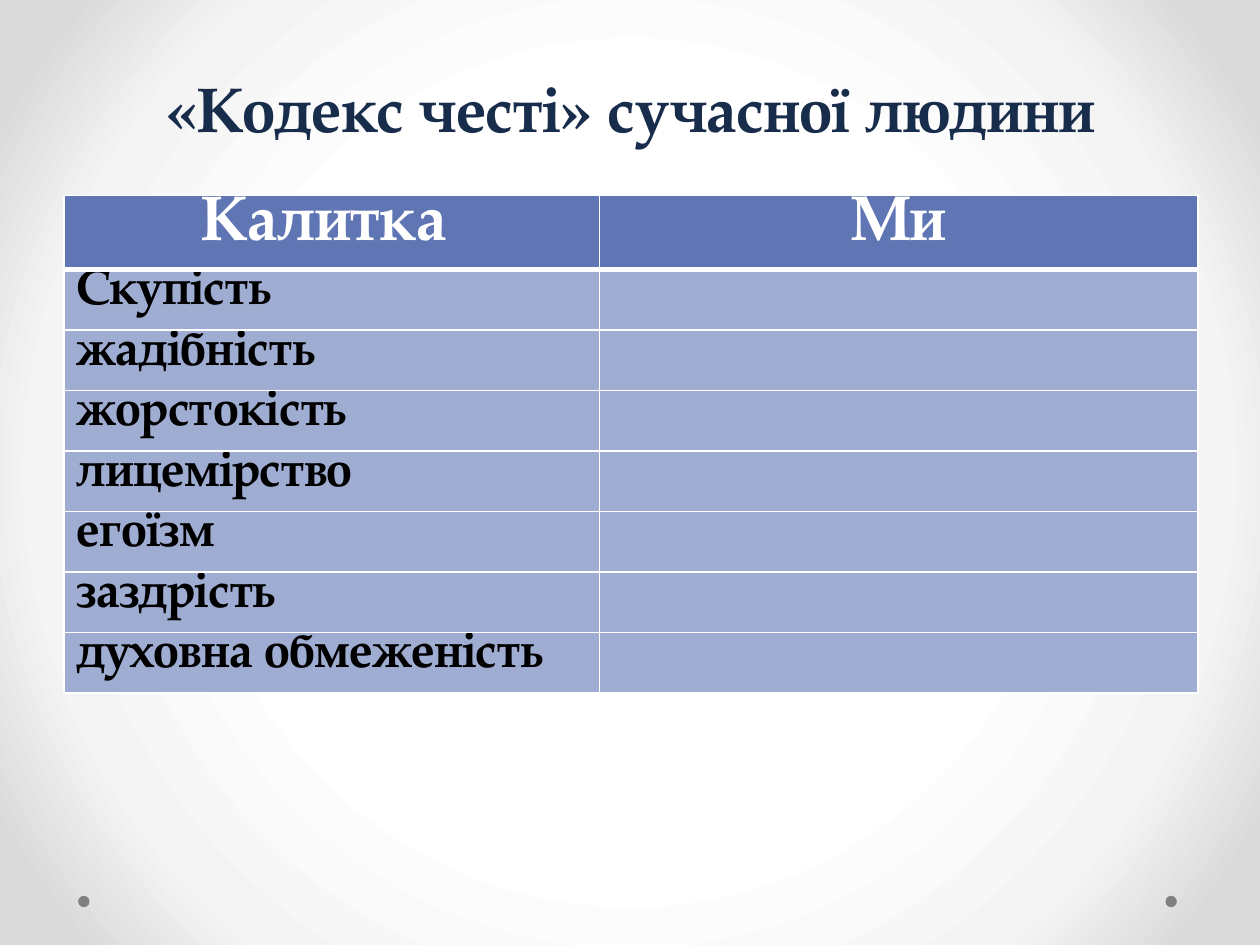
"""Build the slide comparing the honour code of Kalytka with our own."""
from dataclasses import dataclass

import lxml.etree
import pptx
import pptx.dml.color
import pptx.enum.shapes
import pptx.enum.text
import pptx.oxml
import pptx.oxml.ns
import pptx.util

Inches = pptx.util.Inches
Pt = pptx.util.Pt


@dataclass(frozen=True)
class Theme:
    font: str = "TeX Gyre Pagella"
    title: str = "182C4B"
    header: str = "6076B4"
    body: str = "A0ADD2"
    white: str = "FFFFFF"
    black: str = "000000"
    dot: str = "808080"
    large: int = 36
    medium: int = 28
    title_spacing: int = 58
    thin: int = 1
    thick: int = 3
    backdrop: tuple = ((50, "FFFFFF"), (76, "F4F4F4"), (92, "DADADA"))


@dataclass(frozen=True)
class RowStyle:
    height: float
    size: int
    ink: str
    fill: str
    align: pptx.enum.text.PP_ALIGN


THEME = Theme()
HEADER = RowStyle(0.59, THEME.large, THEME.white, THEME.header, pptx.enum.text.PP_ALIGN.CENTER)
BODY = RowStyle(0.48, THEME.medium, THEME.black, THEME.body, pptx.enum.text.PP_ALIGN.LEFT)
TITLE = "«Кодекс честі» сучасної людини"
HEADINGS = ("Калитка ", "Ми")
TRAITS = ("Скупість", "жадібність", "жорстокість", "лицемірство", "егоїзм",
          "заздрість", "духовна обмеженість")
LEFT, WIDTH = 0.51, 9
COLUMNS = (4.25, 4.75)
DOT_LEFTS = (9.25, 0.62)


def rgb(value: str) -> pptx.dml.color.RGBColor:
    """Return a colour from its hexadecimal form."""
    return pptx.dml.color.RGBColor.from_string(value)


def add_span(para, text: str, size: int, ink: str) -> None:
    """Add one bold run to a paragraph."""
    span = para.add_run()
    span.text = text
    span.font.name = THEME.font
    span.font.size = Pt(size)
    span.font.bold = True
    span.font.color.rgb = rgb(ink)


def paint_background(page) -> None:
    """Fill the page with a radial gradient."""
    page.background.fill.solid()
    properties = page.element.find(".//" + pptx.oxml.ns.qn("p:bgPr"))
    stops = "".join(
        f'<a:gs pos="{place * 1000}"><a:srgbClr val="{colour}"/></a:gs>'
        for place, colour in THEME.backdrop
    )
    gradient = pptx.oxml.parse_xml(
        f'<a:gradFill {pptx.oxml.ns.nsdecls("a")} rotWithShape="1"><a:gsLst>{stops}</a:gsLst>'
        '<a:path path="circle"><a:fillToRect l="50000" t="50000" r="50000" b="50000"/></a:path>'
        "</a:gradFill>"
    )
    properties.replace(properties[0], gradient)


def add_dot(page, left: float) -> None:
    """Draw one small footer dot."""
    dot = page.shapes.add_shape(pptx.enum.shapes.MSO_SHAPE.OVAL, Inches(left), Inches(7.11),
                                Inches(0.09), Inches(0.09))
    dot.shadow.inherit = False
    dot.fill.solid()
    dot.fill.fore_color.rgb = rgb(THEME.dot)
    dot.line.fill.background()


def fill_title(page) -> None:
    """Place and write the title."""
    title = page.shapes.title
    title.left, title.top = Inches(LEFT), Inches(0.44)
    title.width, title.height = Inches(WIDTH), Inches(0.71)
    box = title.text_frame
    box.word_wrap = True
    box.auto_size = pptx.enum.text.MSO_AUTO_SIZE.NONE
    box.vertical_anchor = pptx.enum.text.MSO_ANCHOR.BOTTOM
    box.margin_top = box.margin_bottom = 0
    para = box.paragraphs[0]
    para.alignment = pptx.enum.text.PP_ALIGN.CENTER
    para.line_spacing = Pt(THEME.title_spacing)
    add_span(para, TITLE, THEME.large, THEME.title)


def add_borders(cell, top: int, bottom: int) -> None:
    """Draw white lines on the four sides of a cell."""
    properties = cell._tc.get_or_add_tcPr()
    for side, width in (("L", THEME.thin), ("R", THEME.thin), ("T", top), ("B", bottom)):
        line = lxml.etree.SubElement(properties, pptx.oxml.ns.qn(f"a:ln{side}"), w=str(Pt(width)))
        fill = lxml.etree.SubElement(line, pptx.oxml.ns.qn("a:solidFill"))
        lxml.etree.SubElement(fill, pptx.oxml.ns.qn("a:srgbClr"), val=THEME.white)


def fill_cell(cell, text: str, style: RowStyle, top: int, bottom: int) -> None:
    """Format a cell and write its text, if any."""
    cell.margin_top = cell.margin_bottom = 0
    add_borders(cell, top, bottom)
    cell.fill.solid()
    cell.fill.fore_color.rgb = rgb(style.fill)
    if text:
        para = cell.text_frame.paragraphs[0]
        para.alignment = style.align
        add_span(para, text, style.size, style.ink)


def add_code_table(page) -> None:
    """Add the table of traits."""
    rows = [(HEADINGS, HEADER)] + [((trait, ""), BODY) for trait in TRAITS]
    height = sum(style.height for _, style in rows)
    table = page.shapes.add_table(len(rows), len(COLUMNS), Inches(LEFT), Inches(1.55),
                                  Inches(WIDTH), Inches(height)).table
    table.horz_banding = False
    for column, width in zip(table.columns, COLUMNS):
        column.width = Inches(width)
    for index, (texts, style) in enumerate(rows):
        table.rows[index].height = Inches(style.height)
        top = THEME.thick if index == 1 else THEME.thin
        bottom = THEME.thick if index == 0 else THEME.thin
        for cell, text in zip(table.rows[index].cells, texts):
            fill_cell(cell, text, style, top, bottom)


def main() -> None:
    """Build and save the deck."""
    deck = pptx.Presentation()
    deck.slide_width, deck.slide_height = Inches(10), Inches(7.5)
    page = deck.slides.add_slide(deck.slide_layouts.get_by_name("Title Only"))
    paint_background(page)
    for left in DOT_LEFTS:
        add_dot(page, left)
    fill_title(page)
    add_code_table(page)
    deck.save("out.pptx")


if __name__ == "__main__":
    main()
